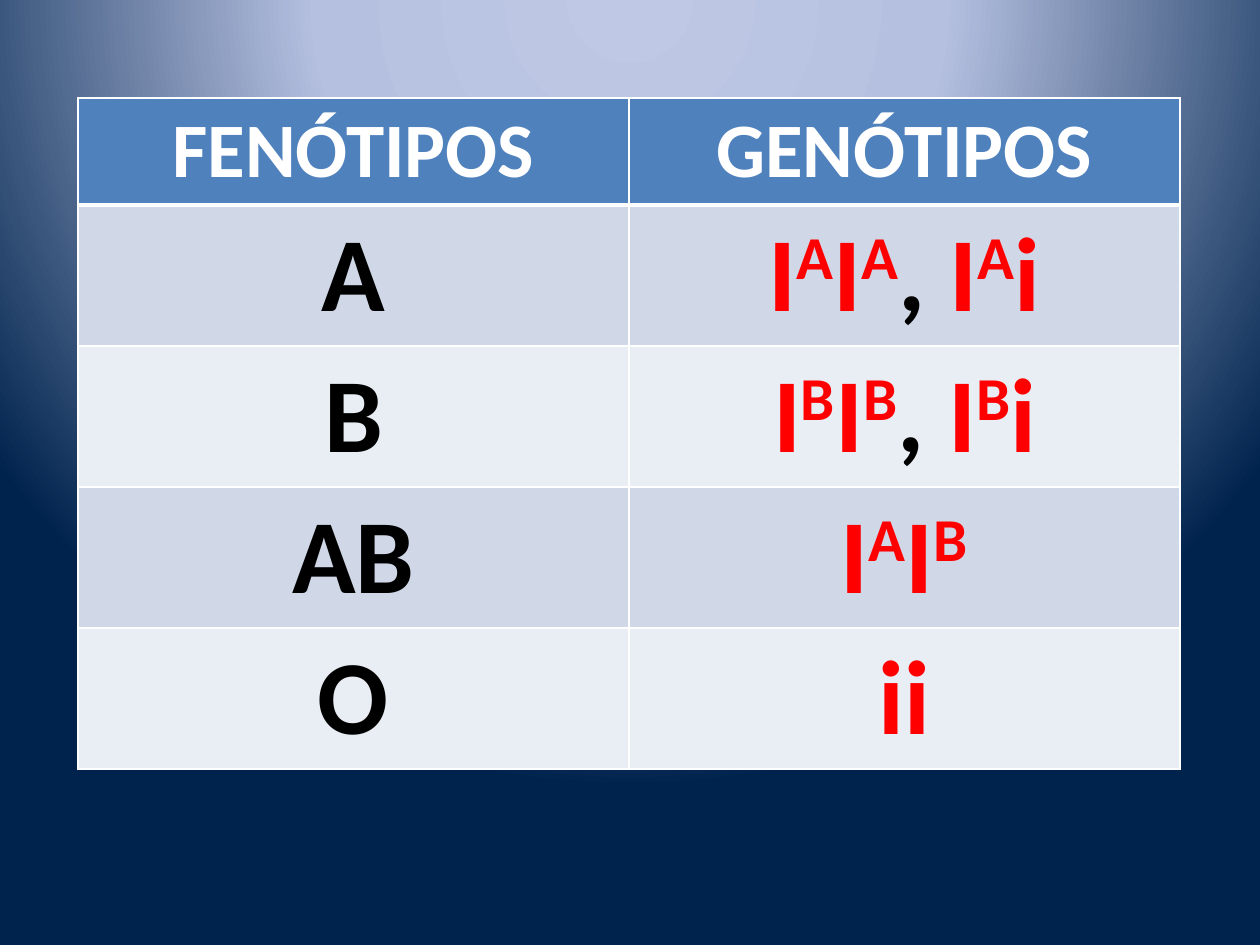
from dataclasses import dataclass
from itertools import groupby

from lxml.etree import SubElement
from pptx import Presentation
from pptx.dml.color import RGBColor
from pptx.enum.text import PP_ALIGN
from pptx.oxml.ns import qn
from pptx.util import Emu, Pt

PIXELS_PER_INCH = 126
COLORS = {
    "header": "4F81BD",
    "odd_band": "D0D8E8",
    "even_band": "E9EDF4",
    "white": "FFFFFF",
    "black": "000000",
    "allele": "FF0000",
    "glow_center": "BFC9E5",
    "glow_middle": "B5C0E0",
    "glow_edge": "00234D",
}
GLOW_STOPS = {0: "glow_center", 40: "glow_middle", 100: "glow_edge"}
GLOW_FOCUS = {"l": 50, "t": -80, "r": 50, "b": 180}


@dataclass
class BloodGroup:
    phenotype: str
    genotypes: str


BLOOD_GROUPS = [
    BloodGroup("A", "IAIA, IAi"),
    BloodGroup("B", "IBIB, IBi"),
    BloodGroup("AB", "IAIB"),
    BloodGroup("O", "ii"),
]


def px(value: int) -> Emu:
    return Emu(round(value * 914400 / PIXELS_PER_INCH))


def color(name: str) -> RGBColor:
    return RGBColor.from_string(COLORS[name])


def paint_background(slide) -> None:
    slide.background.fill.gradient()
    gradient = slide.element.find(".//" + qn("a:gradFill"))
    for child in list(gradient):
        gradient.remove(child)
    stops = SubElement(gradient, qn("a:gsLst"))
    for position, name in GLOW_STOPS.items():
        stop = SubElement(stops, qn("a:gs"), pos=str(position * 1000))
        SubElement(stop, qn("a:srgbClr"), val=COLORS[name])
    circle = SubElement(gradient, qn("a:path"), attrib={"path": "circle"})
    focus = {side: str(percent * 1000) for side, percent in GLOW_FOCUS.items()}
    SubElement(circle, qn("a:fillToRect"), attrib=focus)


def set_borders(cell, top: int, bottom: int) -> None:
    properties = cell._tc.get_or_add_tcPr()
    for side, points in {"L": 1, "R": 1, "T": top, "B": bottom}.items():
        line = SubElement(properties, qn(f"a:ln{side}"), w=str(Pt(points)))
        fill = SubElement(line, qn("a:solidFill"))
        SubElement(fill, qn("a:srgbClr"), val=COLORS["white"])


def format_run(run, size: int, color_name: str) -> None:
    run.font.name = "Calibri"
    run.font.size = Pt(size)
    run.font.bold = True
    run.font.color.rgb = color(color_name)


def write_text(cell, text: str, size: int, color_name: str) -> None:
    paragraph = cell.text_frame.paragraphs[0]
    paragraph.text = text
    paragraph.alignment = PP_ALIGN.CENTER
    format_run(paragraph.runs[0], size, color_name)


def character_kind(character: str) -> str:
    if character in "AB":
        return "superscript"
    return "separator" if character in ", " else "allele"


def write_genotypes(cell, genotypes: str, size: int) -> None:
    paragraph = cell.text_frame.paragraphs[0]
    paragraph.alignment = PP_ALIGN.CENTER
    for kind, characters in groupby(genotypes, character_kind):
        run = paragraph.add_run()
        run.text = "".join(characters)
        format_run(run, size, "black" if kind == "separator" else "allele")
        if kind == "superscript":
            run.font._element.set("baseline", "30000")


def add_blood_table(slide) -> None:
    row_heights = [107] + [141] * len(BLOOD_GROUPS)
    frame = slide.shapes.add_table(
        len(row_heights), 2, px(78), px(98), px(1102), px(sum(row_heights))
    )
    table = frame.table
    for row, height in zip(table.rows, row_heights):
        row.height = px(height)
    for index, row in enumerate(table.rows):
        band = "header" if index == 0 else "odd_band" if index % 2 else "even_band"
        for cell in row.cells:
            set_borders(cell, 3 if index == 1 else 1, 3 if index == 0 else 1)
            cell.fill.solid()
            cell.fill.fore_color.rgb = color(band)
    for column, heading in enumerate(["FENÓTIPOS", "GENÓTIPOS"]):
        write_text(table.cell(0, column), heading, 44, "white")
    for index, group in enumerate(BLOOD_GROUPS, start=1):
        write_text(table.cell(index, 0), group.phenotype, 60, "black")
        write_genotypes(table.cell(index, 1), group.genotypes, 60)


def main() -> None:
    presentation = Presentation()
    presentation.slide_width = px(1260)
    presentation.slide_height = px(945)
    slide = presentation.slides.add_slide(presentation.slide_layouts[6])
    paint_background(slide)
    add_blood_table(slide)
    presentation.save("out.pptx")


if __name__ == "__main__":
    main()
